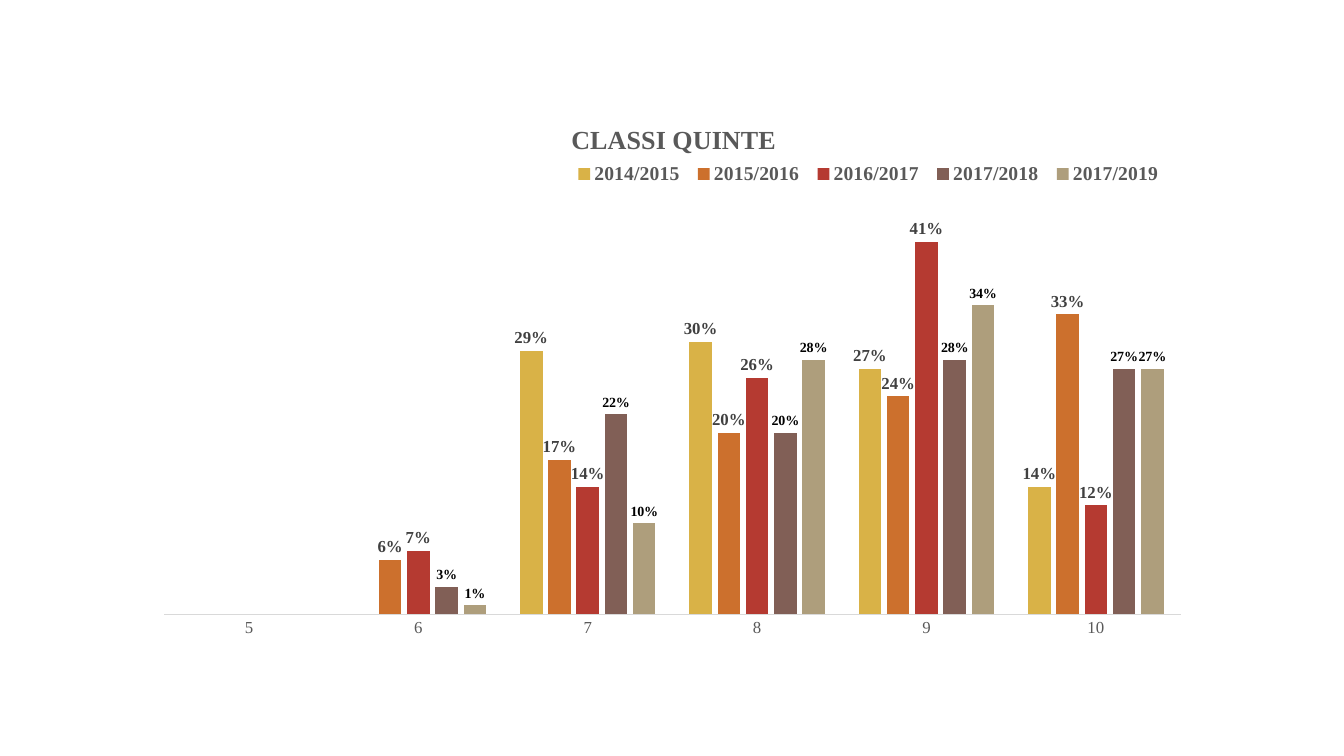
from lxml import etree
from pptx import Presentation
from pptx.chart.data import CategoryChartData
from pptx.dml.color import RGBColor
from pptx.enum.chart import XL_CHART_TYPE, XL_LABEL_POSITION, XL_LEGEND_POSITION, XL_TICK_MARK
from pptx.oxml.ns import qn
from pptx.util import Inches, Pt

COLUMNS = XL_CHART_TYPE.COLUMN_CLUSTERED
ABOVE_BAR = XL_LABEL_POSITION.OUTSIDE_END
TOP = XL_LEGEND_POSITION.TOP
NO_TICK = XL_TICK_MARK.NONE

WIDTH, HEIGHT = Inches(13.33), Inches(7.5)
FONT = "Times New Roman"
COLORS = {"text": "595959", "label": "404040", "black": "000000", "axis": "D9D9D9"}
GRADES = ["5", "6", "7", "8", "9", "10"]
# school year, shares per grade, bar colour, label size, label colour
YEARS = [
    ("2014/2015", [None, None, 0.29, 0.30, 0.27, 0.14], "D9B247", 12, "label"),
    ("2015/2016", [None, 0.06, 0.17, 0.20, 0.24, 0.33], "CC702D", 12, "label"),
    ("2016/2017", [None, 0.07, 0.14, 0.26, 0.41, 0.12], "B53A31", 12, "label"),
    ("2017/2018", [None, 0.03, 0.22, 0.20, 0.28, 0.27], "815F56", 10, "black"),
    ("2017/2019", [None, 0.01, 0.10, 0.28, 0.34, 0.27], "AE9E7C", 10, "black"),
]


def format_font(font, size, color, bold=False):
    font.name, font.size, font.bold = FONT, Pt(size), bold
    font.color.rgb = RGBColor.from_string(COLORS[color])


def place(element, before, inner=False, **shares):
    """Put a chart part at x, y, w, h, given as shares of the chart's size."""
    for old in element.findall(qn("c:layout")):
        element.remove(old)
    layout = etree.Element(qn("c:layout"))
    manual = etree.SubElement(layout, qn("c:manualLayout"))
    if inner:
        etree.SubElement(manual, qn("c:layoutTarget")).set("val", "inner")
    for mode in ("xMode", "yMode"):
        etree.SubElement(manual, qn("c:" + mode)).set("val", "edge")
    for name, share in shares.items():
        etree.SubElement(manual, qn("c:" + name)).set("val", str(share))
    element.find(qn(before)).addprevious(layout)


def add_column_chart(page):
    data = CategoryChartData(number_format="0%")
    data.categories = GRADES
    for name, shares, *_ in YEARS:
        data.add_series(name, shares)
    frame = page.shapes.add_chart(
        COLUMNS, int(WIDTH * 0.1065), int(HEIGHT * 0.128),
        int(WIDTH * 0.7877), int(HEIGHT * 0.7293), data)
    chart = frame.chart
    format_font(chart.font, 10, "black")
    return chart


def format_title(chart, text):
    title = chart.chart_title
    span = title.text_frame.paragraphs[0].add_run()
    span.text = text
    format_font(span.font, 18.6, "text", bold=True)
    place(chart.element.find(".//" + qn("c:title")), "c:overlay", x=0.4, y=0.04)


def format_legend(chart):
    chart.has_legend = True
    legend = chart.legend
    legend.position = TOP
    legend.include_in_layout = False
    format_font(legend.font, 14, "text", bold=True)
    place(chart.element.find(".//" + qn("c:legend")), "c:overlay",
          x=0.4, y=0.11, w=0.57, h=0.06)


def format_axes(chart):
    values, grades = chart.value_axis, chart.category_axis
    values.minimum_scale, values.maximum_scale = 0, 0.45
    values.has_major_gridlines = False
    values.visible = False
    grades.major_tick_mark = grades.minor_tick_mark = NO_TICK
    format_font(grades.tick_labels.font, 12, "text")
    line = grades.format.line
    line.width = Pt(0.75)
    line.color.rgb = RGBColor.from_string(COLORS["axis"])


def format_bars(chart):
    plot = chart.plots[0]
    plot.vary_by_categories = False
    plot.gap_width, plot.overlap = 150, -25
    for series, (_, _, fill, size, color) in zip(plot.series, YEARS):
        series.format.fill.solid()
        series.format.fill.fore_color.rgb = RGBColor.from_string(fill)
        labels = series.data_labels
        labels.show_value = True
        labels.number_format, labels.number_format_is_linked = "0%", False
        labels.position = ABOVE_BAR
        format_font(labels.font, size, color, bold=True)
    place(chart.element.find(".//" + qn("c:plotArea")), "c:barChart", inner=True,
          x=0.02, y=0.197, w=0.96, h=0.742)


def main():
    deck = Presentation()
    deck.slide_width, deck.slide_height = WIDTH, HEIGHT
    page = deck.slides.add_slide(deck.slide_layouts[6])
    chart = add_column_chart(page)
    format_title(chart, "CLASSI QUINTE")
    format_legend(chart)
    format_axes(chart)
    format_bars(chart)
    deck.save("out.pptx")


if __name__ == "__main__":
    main()
